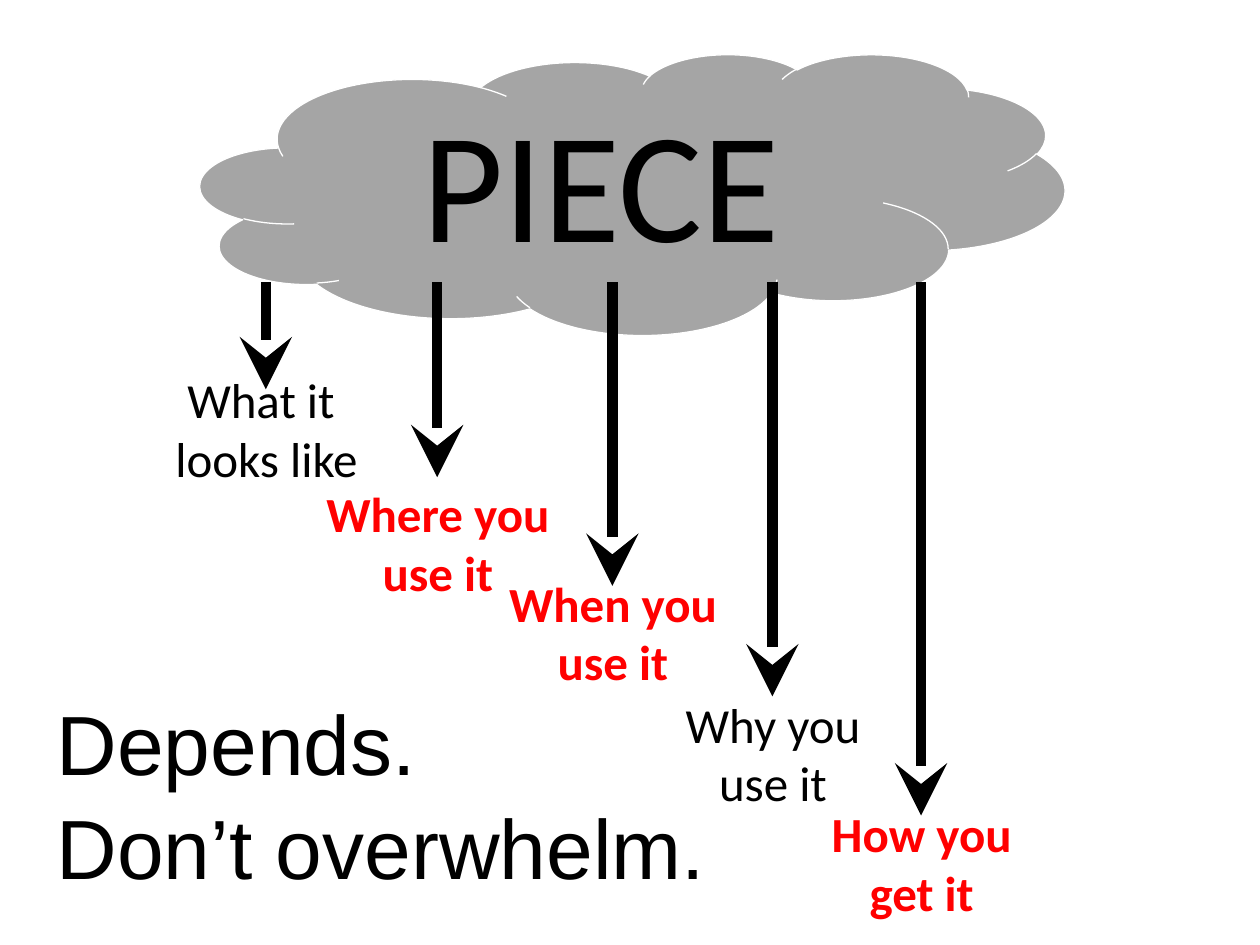
from dataclasses import dataclass

import lxml.etree
import pptx
import pptx.dml.color
import pptx.enum.shapes
import pptx.enum.text
import pptx.oxml.ns
import pptx.slide
import pptx.util

WIDTH, HEIGHT = 10, 7.5
BLACK, RED, GREY, WHITE = "000000", "FF0000", "A5A5A5", "FFFFFF"
ARROW_TOP = 2.24 / HEIGHT
LABEL_HEIGHT = 1.04 / HEIGHT
LABEL_WIDTH = 2.21 / WIDTH


@dataclass
class Aspect:
    """One question about the piece: its arrow and its label, in shares of the slide."""
    words: str
    arrow_x: float
    arrow_end: float
    label_left: float
    label_top: float
    label_width: float = LABEL_WIDTH
    stressed: bool = False


ASPECTS = [
    Aspect("What it \nlooks like", 0.211, 0.412, 0.008, 0.385, label_width=0.407),
    Aspect("Where you\nuse it", 0.347, 0.505, 0.237, 0.505, stressed=True),
    Aspect("When you\nuse it", 0.486, 0.62, 0.376, 0.6, stressed=True),
    Aspect("Why you\nuse it", 0.613, 0.737, 0.503, 0.728),
    Aspect("How you\nget it", 0.731, 0.863, 0.621, 0.844, stressed=True),
]


def color(value: str) -> pptx.dml.color.RGBColor:
    return pptx.dml.color.RGBColor.from_string(value)


def across(share: float) -> pptx.util.Length:
    return pptx.util.Inches(WIDTH * share)


def down(share: float) -> pptx.util.Length:
    return pptx.util.Inches(HEIGHT * share)


def add_cloud(slide: pptx.slide.Slide) -> None:
    cloud = slide.shapes.add_shape(pptx.enum.shapes.MSO_SHAPE.CLOUD, across(0.159),
                                   down(0.057), across(0.686), down(0.297))
    cloud.shadow.inherit = False
    cloud.fill.solid()
    cloud.fill.fore_color.rgb = color(GREY)
    cloud.line.color.rgb = color(WHITE)
    cloud.line.width = pptx.util.Pt(0.75)


def add_arrow(slide: pptx.slide.Slide, x: float, end: float) -> None:
    arrow = slide.shapes.add_connector(pptx.enum.shapes.MSO_CONNECTOR.STRAIGHT,
                                       across(x), down(ARROW_TOP), across(x), down(end))
    arrow.line.color.rgb = color(BLACK)
    arrow.line.width = pptx.util.Pt(6)
    qn = pptx.oxml.ns.qn
    lxml.etree.SubElement(arrow.line._get_or_add_ln(), qn("a:tailEnd"),
                          type="stealth", w="lg", len="lg")
    lxml.etree.SubElement(arrow._element.spPr, qn("a:effectLst"))


def add_text(slide: pptx.slide.Slide, words: str, left: float, top: float, width: float,
             height: float, size: float, font: str = "Calibri", ink: str = BLACK,
             bold: bool = False, centred: bool = True, space_before: float = 0) -> None:
    frame = slide.shapes.add_textbox(across(left), down(top), across(width),
                                     down(height)).text_frame
    frame.word_wrap = True
    frame.text = words
    align = pptx.enum.text.PP_ALIGN
    for paragraph in frame.paragraphs:
        paragraph.alignment = align.CENTER if centred else align.LEFT
        paragraph.space_before = pptx.util.Pt(space_before)
        for run in paragraph.runs:
            run.font.name = font
            run.font.size = pptx.util.Pt(size)
            run.font.bold = bold
            run.font.color.rgb = color(ink)


def main() -> None:
    deck = pptx.Presentation()
    deck.slide_width, deck.slide_height = across(1), down(1)
    slide = deck.slides.add_slide(deck.slide_layouts[6])

    # Cloud with the arrows falling from it
    add_cloud(slide)
    for aspect in ASPECTS:
        add_arrow(slide, aspect.arrow_x, aspect.arrow_end)

    # Label at the tip of each arrow
    for aspect in ASPECTS:
        add_text(slide, aspect.words, aspect.label_left, aspect.label_top,
                 aspect.label_width, LABEL_HEIGHT, 28,
                 ink=RED if aspect.stressed else BLACK, bold=aspect.stressed)

    # Advice at the lower left, and the word in the cloud
    add_text(slide, "Depends.\nDon’t overwhelm.", 0.035, 0.725, 0.605, 0.121, 48,
             font="Arial", centred=False, space_before=2)
    add_text(slide, "PIECE", 0.207, 0.083, 0.54, 0.216, 90)

    deck.save("out.pptx")


if __name__ == "__main__":
    main()
